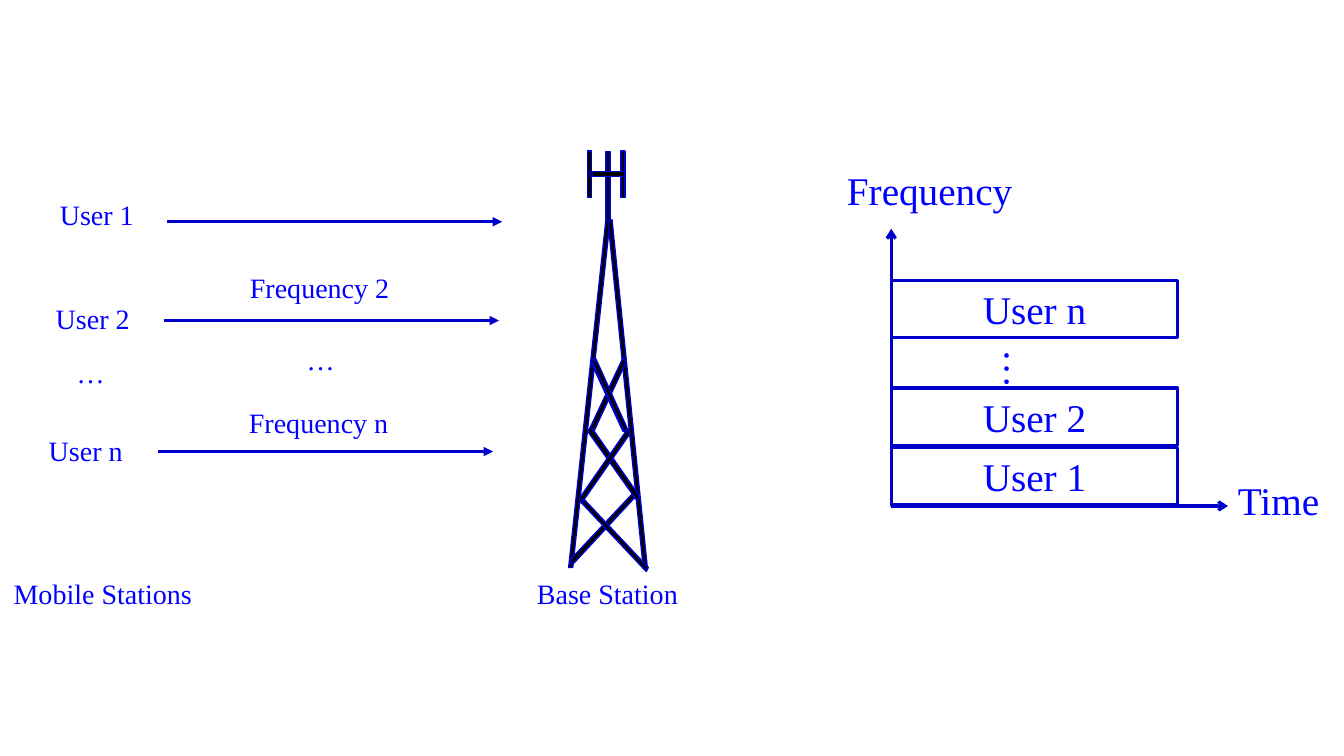
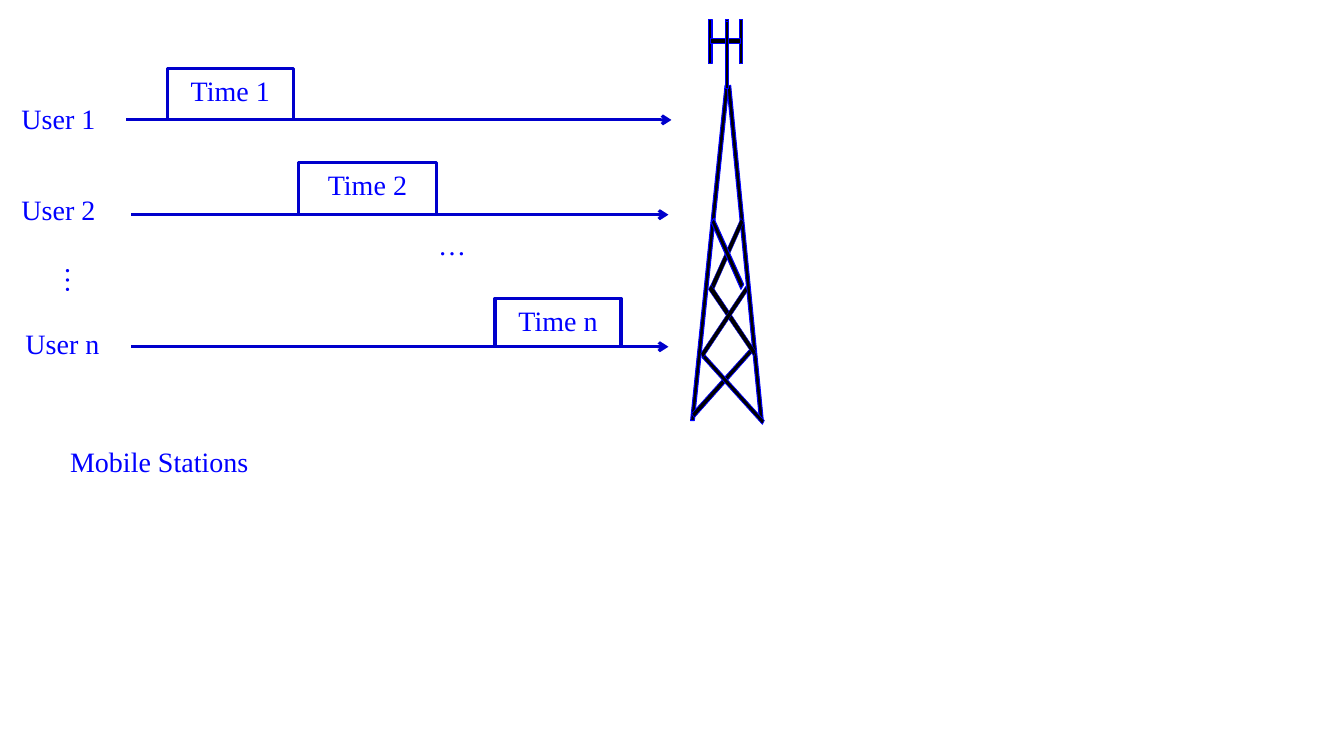
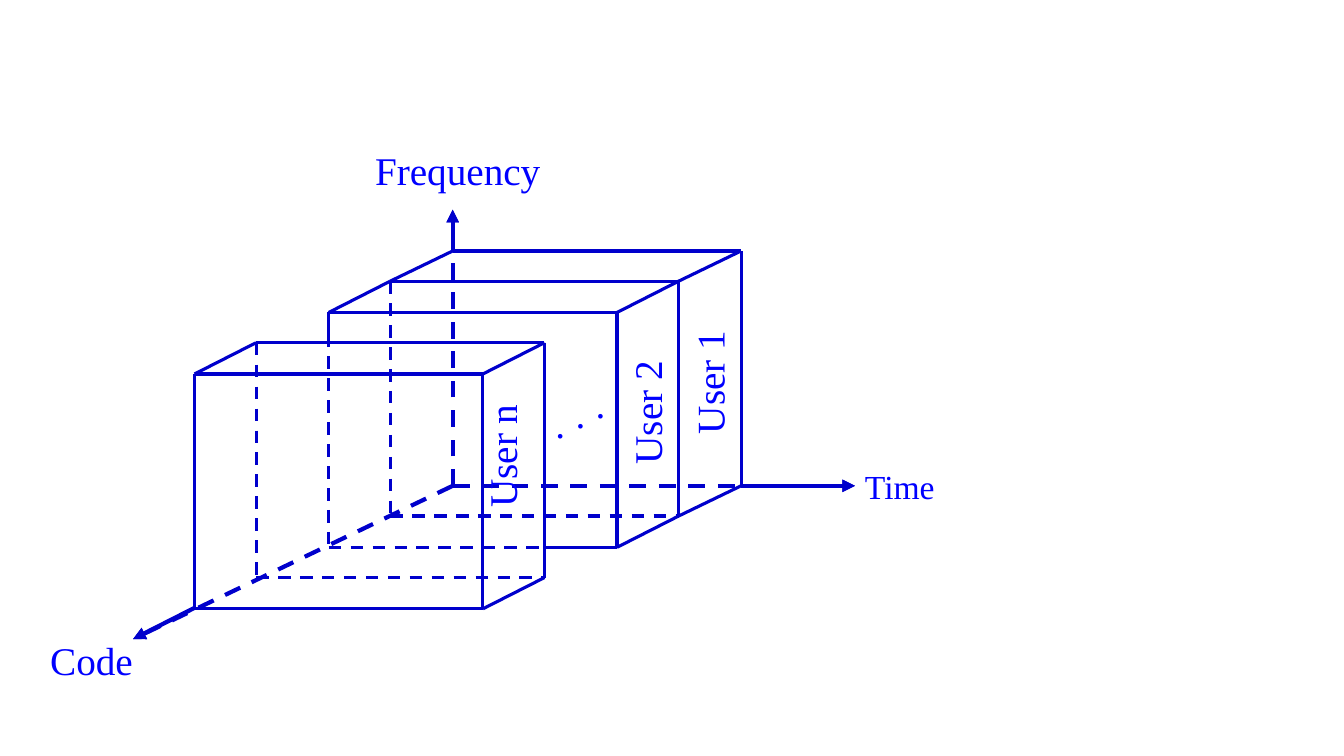
from pptx import Presentation
from pptx.dml.color import RGBColor
from pptx.enum.dml import MSO_LINE
from pptx.enum.shapes import MSO_CONNECTOR, MSO_SHAPE
from pptx.enum.text import MSO_ANCHOR, PP_ALIGN
from pptx.oxml.ns import qn
from pptx.util import Inches, Pt
from lxml import etree

DASH = MSO_LINE.DASH
STRAIGHT = MSO_CONNECTOR.STRAIGHT
RECT = MSO_SHAPE.RECTANGLE
TOP = MSO_ANCHOR.TOP
LEFT, MID = PP_ALIGN.LEFT, PP_ALIGN.CENTER

FONT = "Times New Roman"
COLORS = {"text": "0000FF", "line": "0000CC", "steel": "000000", "glow": "0000FF"}

MAST_W, MAST_H = 0.79, 4.18
STRUTS = [
    [(0.41, 0.69), (0.37, 0.68), (0, 4.13), (0.04, 4.13)],
    [(0.43, 0.68), (0.39, 0.69), (0.74, 4.13), (0.78, 4.13)],
    [(0.01, 4.06), (0.04, 4.1), (0.68, 3.41), (0.66, 3.37)],
    [(0.68, 3.47), (0.7, 3.42), (0.22, 2.73), (0.19, 2.78)],
    [(0.22, 2.73), (0.25, 2.78), (0.57, 2.09), (0.54, 2.05)],
    [(0.77, 4.17), (0.79, 4.13), (0.14, 3.44), (0.12, 3.48)],
    [(0.11, 3.44), (0.13, 3.49), (0.61, 2.8), (0.59, 2.75)],
    [(0.54, 2.78), (0.57, 2.73), (0.25, 2.05), (0.22, 2.09)],
]
BRACE = [(0.56, 2.8), (0.58, 2.75), (0.27, 2.06), (0.24, 2.1)]
BARS = [
    (0.19, 0, 0.04, 0.46),
    (0.52, 0, 0.04, 0.46),
    (0.21, 0.2, 0.33, 0.05),
    (0.37, 0, 0.04, 0.69),
]


def paint(name):
    return RGBColor.from_string(COLORS[name])


def write(shape, text, size, align):
    frame = shape.text_frame
    frame.word_wrap = True
    frame.vertical_anchor = TOP
    para = frame.paragraphs[0]
    para.alignment = align
    run = para.add_run()
    run.text = text
    run.font.name = FONT
    run.font.size = Pt(size)
    run.font.color.rgb = paint("text")


def label(slide, text, box, size=20, align=MID, turn=0):
    shape = slide.shapes.add_textbox(*map(Inches, box))
    shape.rotation = turn
    write(shape, text, size, align)


def frame_box(slide, text, box, size):
    shape = slide.shapes.add_shape(RECT, *map(Inches, box))
    shape.shadow.inherit = False
    shape.fill.background()
    shape.line.color.rgb = paint("line")
    shape.line.width = Pt(2.25)
    write(shape, text, size, MID)


def line(slide, start, end, width=2.25, dash=None, tip=None):
    link = slide.shapes.add_connector(STRAIGHT, *map(Inches, (*start, *end)))
    link.line.color.rgb = paint("line")
    link.line.width = Pt(width)
    if dash:
        link.line.dash_style = dash
    if tip:
        etree.SubElement(link.line._get_or_add_ln(), qn("a:tailEnd"), type=tip)
    etree.SubElement(link._element.spPr, qn("a:effectLst"))


def steel(shape, edge, width):
    shape.shadow.inherit = False
    shape.fill.solid()
    shape.fill.fore_color.rgb = paint("steel")
    shape.line.color.rgb = paint(edge)
    shape.line.width = Pt(width)


def tower(slide, box, edge, widths, bar_width, struts, bars):
    x, y, w, h = box
    sx, sy = w / MAST_W, h / MAST_H
    for strut, width in zip(struts, widths):
        spots = [(Inches(x + px * sx), Inches(y + py * sy)) for px, py in strut]
        form = slide.shapes.build_freeform(*spots[0], scale=1.0)
        form.add_line_segments(spots[1:], close=True)
        steel(form.convert_to_shape(), edge, width)
    for bx, by, bw, bh in bars:
        place = (x + bx * sx, y + by * sy, bw * sx, bh * sy)
        bar = slide.shapes.add_shape(RECT, *map(Inches, place))
        steel(bar, edge, bar_width)


def bands(slide, x, y):
    rows = [
        ("User 1", 0.3, 0.24, 1.66, 0.53),
        ("User 2", 0.26, 1.27, 1.63, 1.51),
        ("User n", 0.19, 2.58, 1.57, 2.81),
    ]
    for name, left, top, start, level in rows:
        label(slide, name, (x + left, y + top, 1.32, 0.5))
        line(slide, (x + start, y + level), (x + start + 3.32, y + level), tip="triangle")
    label(slide, "Frequency 2", (x + 2.38, y + 0.96, 2.12, 0.43), align=LEFT)
    label(slide, "Frequency n", (x + 2.37, y + 2.3, 2.12, 0.43), align=LEFT)
    label(slide, "…", (x + 0.36, y + 1.81, 1.08, 0.44))
    label(slide, "…", (x + 2.56, y + 1.68, 1.24, 0.44))
    label(slide, "Mobile Stations", (x + 0.02, y + 4, 2, 0.44))
    label(slide, "Base Station", (x + 5.19, y + 4, 1.67, 0.44))


def stack(slide, x, y):
    line(slide, (x, y), (x + 3.34, y), tip="arrow")
    line(slide, (x, y - 0.07), (x, y - 2.75), tip="arrow")
    for name, rise in (("User 1", 0.58), ("User 2", 1.17), ("User n", 2.24)):
        frame_box(slide, name, (x, y - rise, 2.84, 0.57), 28)
    label(slide, "…", (x + 0.99, y - 1.65, 0.58, 0.57), 28, LEFT, 90)
    label(slide, "Frequency", (x - 0.83, y - 3.42, 2.42, 0.57), 28)
    label(slide, "Time", (x + 3.34, y - 0.34, 1.25, 0.57), 28, LEFT)


def slots(slide, x, y):
    rows = [
        ("1", 0.28, 1, 1.25, 6.66, 0.51, 1.66, 1.25, 0.51),
        ("2", 1.18, 1, 1.3, 6.63, 1.45, 2.96, 1.37, 0.52),
        ("n", 2.51, 1.08, 1.3, 6.63, 2.76, 4.91, 1.25, 0.48),
    ]
    for mark, top, wide, start, end, level, left, w, h in rows:
        frame_box(slide, "Time " + mark, (x + left, y + level - h, w, h), 20)
        line(slide, (x + start, y + level), (x + end, y + level), tip="arrow")
        label(slide, "User " + mark, (x + 0.08, y + top, wide, 0.5))
    label(slide, "…", (x + 3.96, y + 1.53, 1.05, 0.44))
    label(slide, "…", (x, y + 1.88, 1.15, 0.44), turn=270)
    label(slide, "Mobile Stations", (x + 0.16, y + 3.68, 2.84, 0.44))


def axes(slide, x, y, w, h):
    spans = [
        ((x + w, y), (x + 3.99, y)),
        ((x, y - h), (x, y - 2.74)),
        ((x - 2.56, y + 1.21), (x - 3.17, y + 1.52)),
    ]
    for start, tip in spans:
        line(slide, (x, y), tip, 3, DASH, "triangle")
        line(slide, start, tip, 3, tip="triangle")
    label(slide, "Time", (x + 3.99, y - 0.25, 0.92, 0.5), 24, LEFT)
    label(slide, "Code", (x - 4.09, y + 1.44, 1.53, 0.57), 28, LEFT)
    label(slide, "Frequency", (x - 1.23, y - 3.42, 2.56, 0.57), 28)


def slabs(slide, x, y, w, h):
    steps = [(0, 0), (-0.62, 0.3), (-1.23, 0.61), (-1.95, 0.91), (-2.56, 1.22)]
    planes = [(x + dx, y - h + dy) for dx, dy in steps]
    for rank, (px, py) in enumerate(planes):
        line(slide, (px, py), (px + w, py))
        line(slide, (px + w, py), (px + w, py + h))
        if rank:
            dash = DASH if rank < 4 else None
            line(slide, (px, py), (px, py + h), dash=dash)
            line(slide, (px, py + h), (px + w, py + h), dash=dash)
    for back, front in ((0, 1), (1, 2), (3, 4)):
        for dx, dy in ((0, 0), (w, 0), (w, h)):
            ends = [(px + dx, py + dy) for px, py in (planes[back], planes[front])]
            line(slide, *ends)
    (mx, my), (nx, ny) = planes[2:4]
    line(slide, (mx, my), (mx, ny))
    line(slide, (nx + w, my + h), (mx + w, my + h))
    for name, dx, dy in (("User 1", 2.55, -1.02), ("User 2", 1.93, -0.72), ("User n", 0.49, -0.29)):
        label(slide, name, (x + dx - 1.02, y + dy - 0.29, 2.03, 0.57), 28, turn=270)
    for rank in range(3):
        label(slide, ".", (x + 0.92 + 0.2 * rank, y - 0.91 - 0.1 * rank, 0.31, 0.57), 28, LEFT)


def main():
    deck = Presentation()
    deck.slide_width = Inches(13.33)
    deck.slide_height = Inches(7.5)
    first, second, third = [deck.slides.add_slide(deck.slide_layouts[6]) for _ in range(3)]

    bands(first, 0, 1.67)
    tower(first, (5.64, 1.5, 0.79, 4.18), "line", [1] * 9, 1,
          STRUTS + [BRACE], BARS + [(0.23, 0.2, 0.33, 0.05)])
    stack(first, 8.84, 5.02)

    slots(second, 0, 0.68)
    tower(second, (6.85, 0.19, 0.73, 4.03), "glow",
          [0.75, 0.75, 0.5, 0.25, 0.25, 0.5, 0.25, 0.75], 0.75,
          STRUTS, BARS + [(0.37, 0.02, 0.04, 0.69)])

    axes(third, 4.49, 4.82, 2.86, 2.33)
    slabs(third, 4.49, 4.82, 2.86, 2.33)
    deck.save("out.pptx")


if __name__ == "__main__":
    main()
